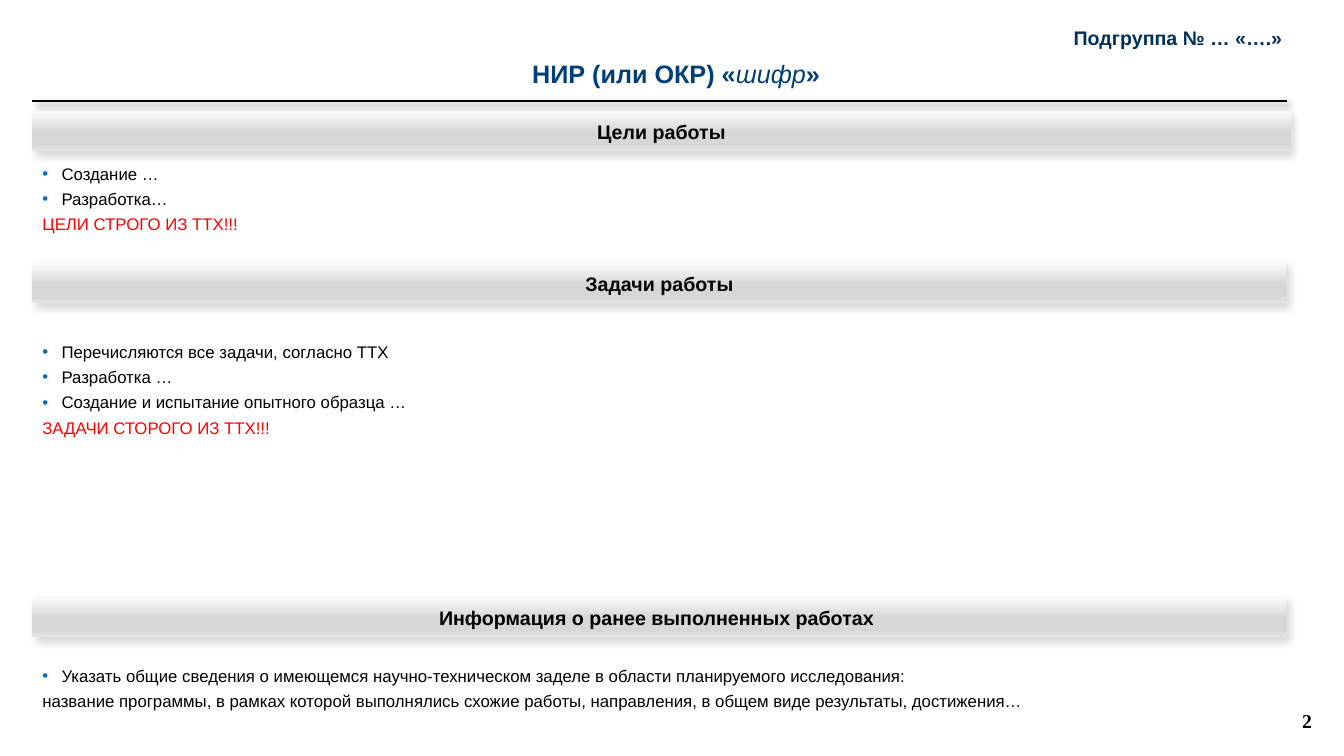
from lxml.etree import SubElement
from pptx import Presentation
from pptx.dml.color import RGBColor
from pptx.enum.shapes import MSO_CONNECTOR, MSO_SHAPE
from pptx.enum.text import MSO_ANCHOR, MSO_AUTO_SIZE, PP_ALIGN
from pptx.oxml.ns import qn
from pptx.util import Inches, Pt

BLACK = RGBColor(0x00, 0x00, 0x00)
RED = RGBColor(0xFF, 0x00, 0x00)
TITLE_BLUE = RGBColor(0x00, 0x40, 0x77)
GROUP_BLUE = RGBColor(0x00, 0x30, 0x59)
BULLET_BLUE = RGBColor(0x01, 0x6D, 0xB7)
BAR_STOPS = [
    (0, RGBColor(0xFA, 0xFA, 0xFA)),
    (51, RGBColor(0xD7, 0xD7, 0xD7)),
    (83, RGBColor(0xD7, 0xD7, 0xD7)),
    (100, RGBColor(0xE4, 0xE4, 0xE4)),
]
LEFT = 0.32
WIDTH = 12.44


def add_span(paragraph, text, size, color, bold=False, italic=False, font="Arial"):
    span = paragraph.add_run()
    span.text = text
    span.font.name = font
    span.font.size = Pt(size)
    span.font.color.rgb = color
    span.font.bold = bold
    span.font.italic = italic


def add_shadow(shape, opacity, blur, distance):
    """Cast a black shadow at 45 degrees: opacity in percent, lengths in points."""
    effects = SubElement(shape._element.spPr, qn("a:effectLst"))
    shadow = SubElement(effects, qn("a:outerShdw"), blurRad=str(Pt(blur)),
                        dist=str(Pt(distance)), dir="2700000", algn="tl", rotWithShape="0")
    color = SubElement(shadow, qn("a:srgbClr"), val=str(BLACK))
    SubElement(color, qn("a:alpha"), val=str(opacity * 1000))


deck = Presentation()
deck.slide_width = Inches(13.33)
deck.slide_height = Inches(7.5)
page = deck.slides.add_slide(deck.slide_layouts.get_by_name("Comparison"))

# Title and subgroup
title = page.shapes.title
title.left, title.top = Inches(0.3), Inches(0.53)
title.width, title.height = Inches(12.81), Inches(0.4)
title.text_frame.auto_size = MSO_AUTO_SIZE.SHAPE_TO_FIT_TEXT
title.text_frame.vertical_anchor = MSO_ANCHOR.TOP
paragraph = title.text_frame.paragraphs[0]
paragraph.alignment = PP_ALIGN.CENTER
add_span(paragraph, "НИР (или ОКР) «", 18, TITLE_BLUE, bold=True)
add_span(paragraph, "шифр", 18, TITLE_BLUE, italic=True)
add_span(paragraph, "»", 18, TITLE_BLUE, bold=True)

group = page.placeholders[1]
group.left, group.top = Inches(0.31), Inches(0.2)
group.width, group.height = Inches(12.41), Inches(0.29)
frame = group.text_frame
frame.margin_left = frame.margin_top = frame.margin_right = frame.margin_bottom = 0
frame.auto_size = MSO_AUTO_SIZE.NONE
frame.vertical_anchor = MSO_ANCHOR.BOTTOM
paragraph = frame.paragraphs[0]
paragraph.alignment = PP_ALIGN.RIGHT
paragraph.space_before = Pt(0)
add_span(paragraph, "Подгруппа № … «….»", 14, GROUP_BLUE, bold=True)

rule = page.shapes.add_connector(MSO_CONNECTOR.STRAIGHT, Inches(LEFT), Inches(1),
                                 Inches(LEFT + WIDTH), Inches(1))
rule.line.color.rgb = BLACK
rule.line.width = Pt(1.5)
add_shadow(rule, 40, 4, 3)

# Sections: heading, bar top, width, list placeholder, list top, list height,
# lines as (text, has bullet, colour)
sections = [
    ("Цели работы", 1.11, 12.48, 2, 1.57, 0.79, [
        ("Создание …", True, BLACK),
        ("Разработка…", True, BLACK),
        ("ЦЕЛИ СТРОГО ИЗ ТТХ!!!", False, RED),
    ]),
    ("Задачи работы", 2.62, WIDTH, 3, 3.34, 1.04, [
        ("Перечисляются все задачи, согласно ТТХ", True, BLACK),
        ("Разработка …", True, BLACK),
        ("Создание и испытание опытного образца …", True, BLACK),
        ("ЗАДАЧИ СТОРОГО ИЗ ТТХ!!!", False, RED),
    ]),
    ("Информация о ранее выполненных работах ", 5.93, WIDTH, 4, 6.55, 0.55, [
        ("Указать общие сведения о имеющемся научно-техническом заделе "
         "в области планируемого исследования:", True, BLACK),
        ("название программы, в рамках которой выполнялись схожие работы, "
         "направления, в общем виде результаты, достижения…", False, BLACK),
    ]),
]

for heading, bar_top, width, list_index, list_top, list_height, lines in sections:
    bar = page.shapes.add_shape(MSO_SHAPE.RECTANGLE, Inches(LEFT), Inches(bar_top),
                                Inches(width), Inches(0.39))
    bar.fill.gradient()
    bar.fill.gradient_angle = 270
    stops = bar._element.spPr.find(qn("a:gradFill")).find(qn("a:gsLst"))
    stops.clear()
    for position, color in BAR_STOPS:
        stop = SubElement(stops, qn("a:gs"), pos=str(position * 1000))
        SubElement(stop, qn("a:srgbClr"), val=str(color))
    bar.line.fill.background()
    add_shadow(bar, 14, 6, 3)
    frame = bar.text_frame
    frame.margin_left = frame.margin_right = Inches(0.08)
    frame.margin_top = frame.margin_bottom = Inches(0.04)
    frame.vertical_anchor = MSO_ANCHOR.MIDDLE
    paragraph = frame.paragraphs[0]
    paragraph.alignment = PP_ALIGN.CENTER
    add_span(paragraph, heading, 14, BLACK, bold=True)

    box = page.placeholders[list_index]
    box.left, box.top = Inches(LEFT), Inches(list_top)
    box.width, box.height = Inches(width), Inches(list_height)
    frame = box.text_frame
    frame.auto_size = MSO_AUTO_SIZE.SHAPE_TO_FIT_TEXT
    frame.vertical_anchor = MSO_ANCHOR.TOP
    for number, (text, has_bullet, color) in enumerate(lines):
        paragraph = frame.add_paragraph() if number else frame.paragraphs[0]
        paragraph.alignment = PP_ALIGN.JUSTIFY
        paragraph.space_before = Pt(0)
        paragraph.space_after = Pt(3.6)
        properties = paragraph._p.get_or_add_pPr()
        indent = Inches(0.19) if has_bullet else 0
        properties.set("marL", str(indent))
        properties.set("indent", str(-indent))
        if has_bullet:
            bullet_color = SubElement(properties, qn("a:buClr"))
            SubElement(bullet_color, qn("a:srgbClr"), val=str(BULLET_BLUE))
            SubElement(properties, qn("a:buFont"), typeface="Arial")
            SubElement(properties, qn("a:buChar"), char="•")
        else:
            SubElement(properties, qn("a:buNone"))
        add_span(paragraph, text, 12, color)

# Page number
page_number = page.shapes.add_textbox(Inches(10.11), Inches(6.95), Inches(3), Inches(0.4))
page_number.text_frame.word_wrap = True
page_number.text_frame.vertical_anchor = MSO_ANCHOR.MIDDLE
paragraph = page_number.text_frame.paragraphs[0]
paragraph.alignment = PP_ALIGN.RIGHT
add_span(paragraph, "2", 14, BLACK, bold=True, font="Times New Roman")

deck.save("out.pptx")
